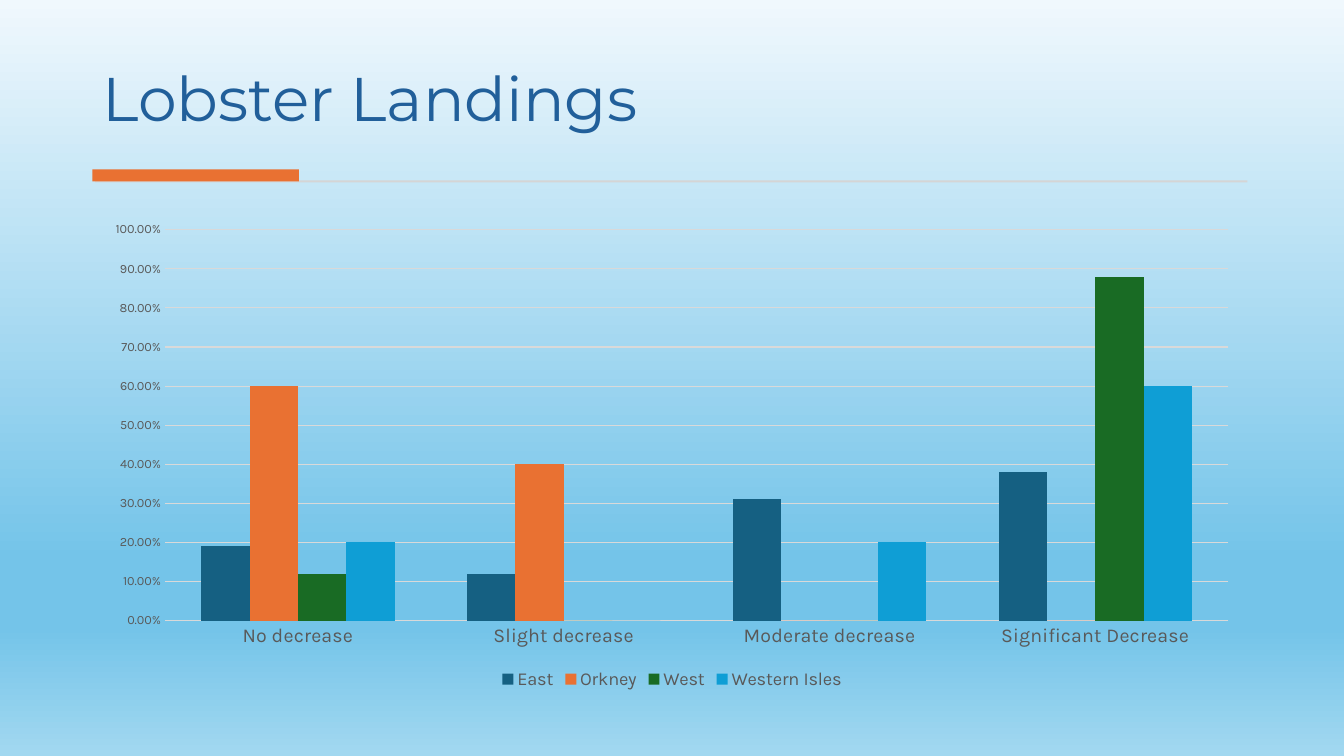
from copy import deepcopy

from pptx import Presentation
from pptx.chart.data import CategoryChartData
from pptx.dml.color import RGBColor
from pptx.enum.chart import XL_CHART_TYPE, XL_LEGEND_POSITION, XL_TICK_MARK
from pptx.enum.shapes import MSO_SHAPE
from pptx.enum.text import MSO_ANCHOR
from pptx.oxml.ns import qn
from pptx.util import Pt

TITLE_BLUE = RGBColor(0x21, 0x5F, 0x9A)
RULE_GREY = RGBColor(0xD5, 0xD5, 0xD5)
GRID_GREY = RGBColor(0xD9, 0xD9, 0xD9)
LABEL_GREY = RGBColor(0x59, 0x59, 0x59)
EAST_BLUE = RGBColor(0x15, 0x60, 0x82)
ORANGE = RGBColor(0xE9, 0x71, 0x32)
WEST_GREEN = RGBColor(0x19, 0x6B, 0x24)
ISLES_BLUE = RGBColor(0x0F, 0x9E, 0xD5)
SKY = [
    (0, RGBColor(0xF0, 0xF8, 0xFD)),
    (0.74, RGBColor(0x74, 0xC4, 0xE9)),
    (0.83, RGBColor(0x74, 0xC4, 0xE9)),
    (1, RGBColor(0xA2, 0xD8, 0xF0)),
]
DECREASES = ["No decrease", "Slight decrease", "Moderate decrease", "Significant Decrease"]
LANDINGS = [
    ("East", EAST_BLUE, (0.19, 0.12, 0.31, 0.38)),
    ("Orkney", ORANGE, (0.6, 0.4, 0, 0)),
    ("West", WEST_GREEN, (0.12, 0, 0, 0.88)),
    ("Western Isles", ISLES_BLUE, (0.2, 0, 0.2, 0.6)),
]


def paint_sky(slide):
    fill = slide.background.fill
    fill.gradient()
    fill.gradient_angle = 270
    stop_list = slide.element.find(".//" + qn("a:gsLst"))
    for _ in range(len(SKY) - len(stop_list)):
        stop_list.append(deepcopy(stop_list[0]))
    for stop, (position, color) in zip(fill.gradient_stops, SKY):
        stop.position = position
        stop.color.rgb = color


def add_title(slide, left, top, width, height):
    frame = slide.shapes.add_textbox(Pt(left), Pt(top), Pt(width), Pt(height)).text_frame
    frame.word_wrap = True
    frame.vertical_anchor = MSO_ANCHOR.BOTTOM
    frame.text = "Lobster Landings"
    heading = frame.paragraphs[0]
    heading.line_spacing = 0.9
    style_font(heading.runs[0].font, 44, TITLE_BLUE, "Montserrat")


def add_divider(slide, left, top, width, height):
    inset, rule_height, accent_width = 2, 1.44, 147.5
    bars = [
        (left + inset, top + height - rule_height / 2, width - inset, rule_height, RULE_GREY),
        (left, top, accent_width, height, ORANGE),
    ]
    for x, y, w, h, color in bars:
        bar = slide.shapes.add_shape(MSO_SHAPE.RECTANGLE, Pt(x), Pt(y), Pt(w), Pt(h))
        bar.shadow.inherit = False
        bar.fill.solid()
        bar.fill.fore_color.rgb = color
        bar.line.fill.background()


def style_font(font, size, color=LABEL_GREY, name="Karla"):
    font.size = Pt(size)
    font.name = name
    font.color.rgb = color


def add_landings_chart(slide, left, top, width, height):
    landings = CategoryChartData(number_format="0.00%")
    landings.categories = DECREASES
    for region, _, shares in LANDINGS:
        landings.add_series(region, shares)
    chart = slide.shapes.add_chart(
        XL_CHART_TYPE.COLUMN_CLUSTERED, Pt(left), Pt(top), Pt(width), Pt(height), landings
    ).chart
    chart.has_title = False
    style_font(chart.font, 10)

    plot = chart.plots[0]
    plot.vary_by_categories = False
    plot.gap_width = 150
    plot.overlap = 0
    for series, (_, color, _) in zip(plot.series, LANDINGS):
        series.format.fill.solid()
        series.format.fill.fore_color.rgb = color

    for axis, size in ((chart.category_axis, 14), (chart.value_axis, 9)):
        axis.major_tick_mark = XL_TICK_MARK.NONE
        axis.minor_tick_mark = XL_TICK_MARK.NONE
        axis.format.line.fill.background()
        style_font(axis.tick_labels.font, size)

    share_axis = chart.value_axis
    share_axis.minimum_scale = 0
    share_axis.maximum_scale = 1
    share_axis.major_unit = 0.1
    share_axis.tick_labels.number_format = "0.00%"
    share_axis.tick_labels.number_format_is_linked = False
    share_axis.has_major_gridlines = True
    grid = share_axis.major_gridlines.format.line
    grid.color.rgb = GRID_GREY
    grid.width = Pt(0.75)

    chart.has_legend = True
    chart.legend.position = XL_LEGEND_POSITION.BOTTOM
    chart.legend.include_in_layout = False
    style_font(chart.legend.font, 13)


def main():
    presentation = Presentation()
    presentation.slide_width = Pt(960)
    presentation.slide_height = Pt(540)
    slide = presentation.slides.add_slide(presentation.slide_layouts[6])
    paint_sky(slide)
    add_title(slide, 66, 20, 827, 80)
    add_divider(slide, 66, 121, 825, 8.6)
    add_landings_chart(slide, 66, 152, 828, 343.5)
    presentation.save("out.pptx")


if __name__ == "__main__":
    main()
